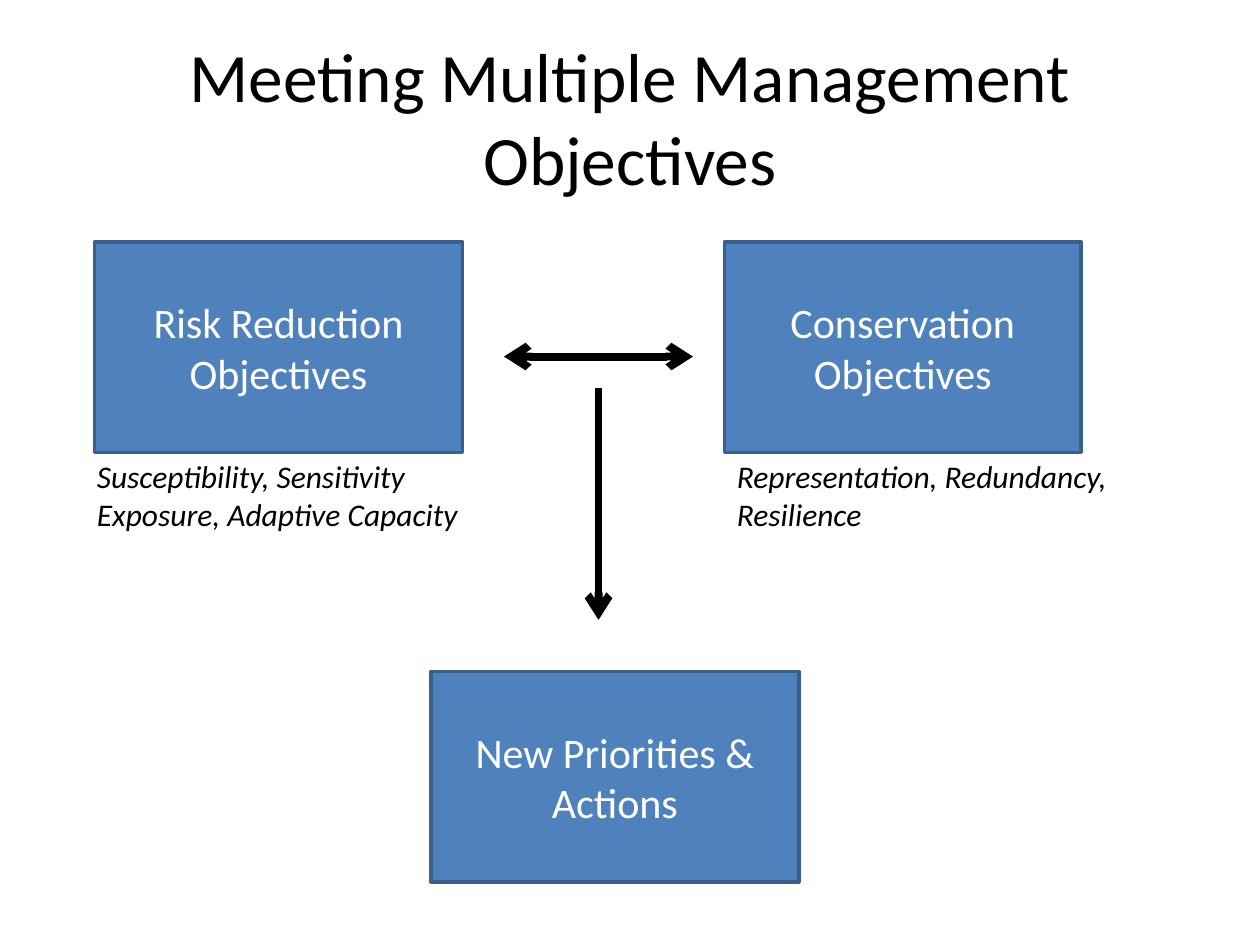
"""Build a slide on meeting multiple management objectives."""
from dataclasses import dataclass

import lxml.etree
import pptx
import pptx.dml.color
import pptx.enum.shapes
import pptx.enum.text
import pptx.oxml.ns
import pptx.util

Inches = pptx.util.Inches
Pt = pptx.util.Pt
ALIGN = pptx.enum.text.PP_ALIGN
ANCHOR = pptx.enum.text.MSO_ANCHOR


@dataclass(frozen=True)
class Theme:
    font: str = "Calibri"
    ink: str = "000000"
    box_fill: str = "4F81BD"
    box_line: str = "3A5F8C"
    box_text: str = "FFFFFF"
    title_size: float = 39.6
    box_size: float = 24
    note_size: float = 18
    outline: float = 2
    arrow: float = 4.5


def rgb(value):
    return pptx.dml.color.RGBColor.from_string(value)


def write(tf, text, *, font, size, color, align=ALIGN.LEFT,
          anchor=ANCHOR.TOP, italic=False, wrap=True):
    tf.word_wrap = wrap
    tf.vertical_anchor = anchor
    tf.text = text
    for p in tf.paragraphs:
        p.alignment = align
        for r in p.runs:
            r.font.name = font
            r.font.size = Pt(size)
            r.font.italic = italic
            r.font.color.rgb = rgb(color)


class SlideBuilder:
    def __init__(self, slide, theme):
        self.slide = slide
        self.theme = theme

    def title(self, text, x, y, w, h):
        sp = self.slide.shapes.add_textbox(Inches(x), Inches(y), Inches(w), Inches(h))
        write(sp.text_frame, text, font=self.theme.font, size=self.theme.title_size,
              color=self.theme.ink, align=ALIGN.CENTER, anchor=ANCHOR.MIDDLE)

    def box(self, text, x, y, w, h):
        sp = self.slide.shapes.add_shape(
            pptx.enum.shapes.MSO_SHAPE.RECTANGLE,
            Inches(x), Inches(y), Inches(w), Inches(h))
        sp.shadow.inherit = False
        sp.fill.solid()
        sp.fill.fore_color.rgb = rgb(self.theme.box_fill)
        sp.line.color.rgb = rgb(self.theme.box_line)
        sp.line.width = Pt(self.theme.outline)
        write(sp.text_frame, text, font=self.theme.font, size=self.theme.box_size,
              color=self.theme.box_text, align=ALIGN.CENTER, anchor=ANCHOR.MIDDLE)

    def note(self, text, x, y, w, h):
        sp = self.slide.shapes.add_textbox(Inches(x), Inches(y), Inches(w), Inches(h))
        write(sp.text_frame, text, font=self.theme.font, size=self.theme.note_size,
              color=self.theme.ink, italic=True, wrap=False)
        sp.text_frame.auto_size = pptx.enum.text.MSO_AUTO_SIZE.SHAPE_TO_FIT_TEXT

    def arrow(self, x1, y1, x2, y2, ends=("tailEnd",)):
        cxn = self.slide.shapes.add_connector(
            pptx.enum.shapes.MSO_CONNECTOR.STRAIGHT,
            Inches(x1), Inches(y1), Inches(x2), Inches(y2))
        cxn.line.color.rgb = rgb(self.theme.ink)
        cxn.line.width = Pt(self.theme.arrow)
        qn = pptx.oxml.ns.qn
        ln = cxn.line._get_or_add_ln()
        for end in ends:
            lxml.etree.SubElement(ln, qn(f"a:{end}"), type="arrow")
        lxml.etree.SubElement(cxn._element.spPr, qn("a:effectLst"))


def main():
    prs = pptx.Presentation()
    prs.slide_width, prs.slide_height = Inches(10), Inches(7.5)
    s = SlideBuilder(prs.slides.add_slide(prs.slide_layouts[6]), Theme())

    box_w, box_h, top = 2.92, 1.67, 1.92
    note_y, note_h = 3.58, 0.71

    s.title("Meeting Multiple Management Objectives", 0.5, 0.3, 9, 1.25)
    s.box("Risk Reduction\nObjectives", 0.75, top, box_w, box_h)
    s.box("Conservation Objectives", 5.75, top, 2.83, box_h)
    s.box("New Priorities & Actions", 3.42, 5.33, box_w, box_h)
    s.arrow(5.5, 2.83, 4, 2.83, ends=("headEnd", "tailEnd"))
    s.arrow(4.75, 3.08, 4.75, 4.92)
    s.note("Susceptibility, Sensitivity\nExposure, Adaptive Capacity",
           0.67, note_y, 3.1, note_h)
    s.note("Representation, Redundancy,\nResilience", 5.75, note_y, 3.17, note_h)

    prs.save("out.pptx")


if __name__ == "__main__":
    main()
